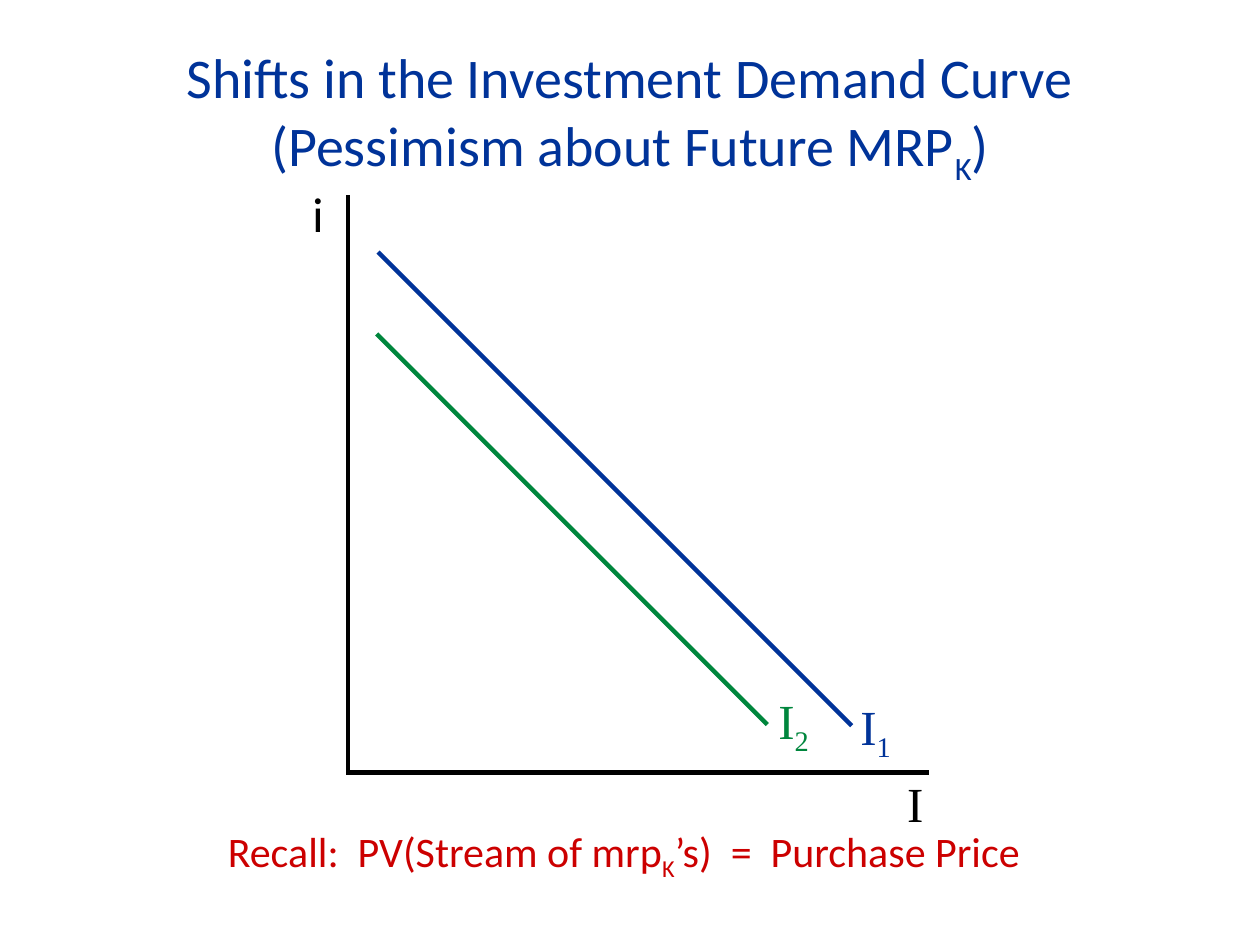
import pptx
import pptx.dml.color
import pptx.enum.shapes
import pptx.enum.text
import pptx.oxml
import pptx.util

Inches = pptx.util.Inches
RGBColor = pptx.dml.color.RGBColor
PP_ALIGN = pptx.enum.text.PP_ALIGN

BLUE = RGBColor(0x00, 0x33, 0x99)
GREEN = RGBColor(0x00, 0x86, 0x3D)
RED = RGBColor(0xCC, 0x00, 0x00)
BLACK = RGBColor(0x00, 0x00, 0x00)
SANS = "Calibri"
SERIF = "Times New Roman"


def write(p, text, size=28, font=SANS, color=BLACK, align=PP_ALIGN.LEFT, spacing=None):
    """Fill a paragraph; every second piece between underscores is a subscript."""
    p.alignment = align
    p.line_spacing = spacing
    for i, piece in enumerate(text.split("_")):
        if not piece:
            continue
        r = p.add_run()
        r.text = piece
        r.font.size = pptx.util.Pt(size)
        r.font.name = font
        r.font.color.rgb = color
        if i % 2:
            r.font._element.set("baseline", "-25000")


class DiagramSlide:
    def __init__(self, prs, line_width=2.5):
        self.s = prs.slides.add_slide(prs.slide_layouts[5])
        self.line_width = pptx.util.Pt(line_width)

    def title(self, lines, left, top, width, height, **style):
        sp = self.s.shapes.title
        sp.left, sp.top = Inches(left), Inches(top)
        sp.width, sp.height = Inches(width), Inches(height)
        tf = sp.text_frame
        tf.word_wrap = True
        tf.auto_size = pptx.enum.text.MSO_AUTO_SIZE.NONE
        tf.vertical_anchor = pptx.enum.text.MSO_ANCHOR.MIDDLE
        for i, line in enumerate(lines):
            p = tf.add_paragraph() if i else tf.paragraphs[0]
            write(p, line, align=PP_ALIGN.CENTER, **style)

    def label(self, text, left, top, width, height, **style):
        sp = self.s.shapes.add_textbox(
            Inches(left), Inches(top), Inches(width), Inches(height))
        tf = sp.text_frame
        tf.word_wrap = True
        write(tf.paragraphs[0], text, **style)

    def line(self, x1, y1, x2, y2, color=BLACK):
        sp = self.s.shapes.add_connector(
            pptx.enum.shapes.MSO_CONNECTOR.STRAIGHT,
            Inches(x1), Inches(y1), Inches(x2), Inches(y2))
        sp.line.color.rgb = color
        sp.line.width = self.line_width
        sp._element.spPr.append(pptx.oxml.parse_xml(
            '<a:effectLst xmlns:a="http://schemas.openxmlformats.org/drawingml/2006/main"/>'))


def main():
    prs = pptx.Presentation()
    prs.slide_width, prs.slide_height = Inches(10), Inches(7.5)
    slide = DiagramSlide(prs)

    slide.title(["Shifts in the Investment Demand Curve",
                 "(Pessimism about Future MRP_K_)"],
                0.7, 0.32, 8.6, 1.18, size=32, color=BLUE)

    # Axes
    slide.line(2.76, 1.55, 2.76, 6.15)
    slide.line(2.77, 6.13, 7.37, 6.13)
    slide.label("i", 2.38, 1.5, 0.59, 0.49, spacing=0.8)
    slide.label("I", 7.1, 6.09, 0.52, 0.57, font=SERIF)

    # Demand curves fall at 45 degrees: start, length along each axis, label place
    curves = [("I_1_", BLUE, 3, 2, 3.76, 6.73, 5.48),
              ("I_2_", GREEN, 2.99, 2.65, 3.1, 6.08, 5.43)]
    for name, color, x, y, run, label_x, label_y in curves:
        slide.line(x, y, x + run, y + run, color)
        slide.label(name, label_x, label_y, 0.59, 0.57, font=SERIF, color=color)

    slide.label("Recall:  PV(Stream of mrp_K_’s)  =  Purchase Price",
                1.71, 6.5, 6.62, 0.81, size=24, color=RED)
    prs.save("out.pptx")


if __name__ == "__main__":
    main()
